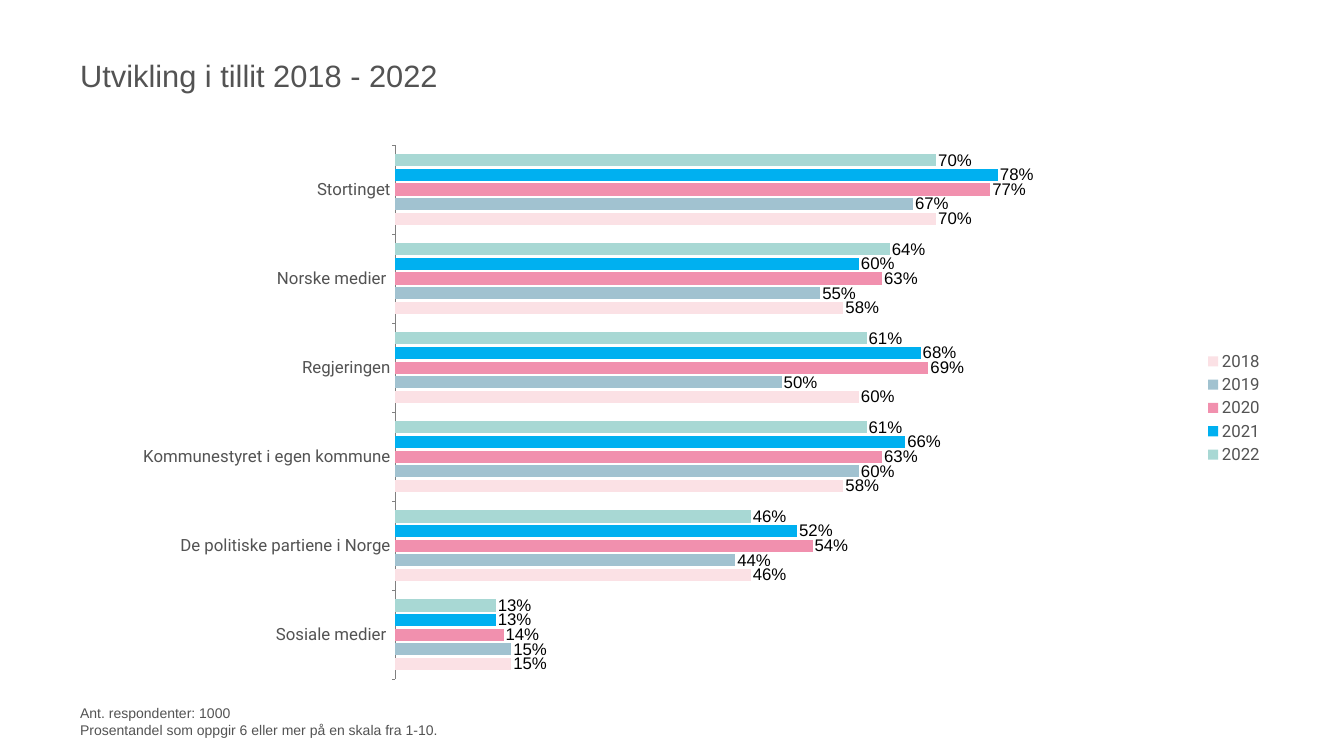
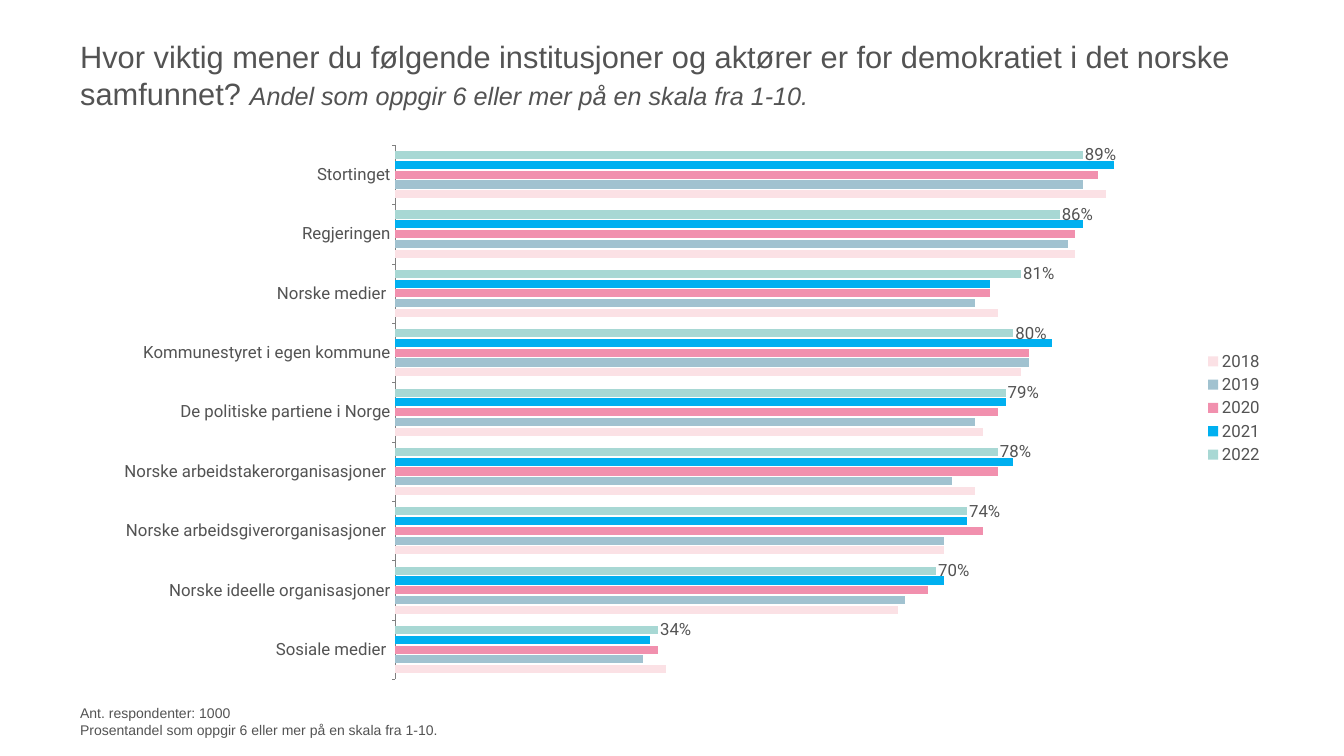
"""Builds two slides with clustered bar charts on trust and democracy in Norway."""
import dataclasses

import pptx
import pptx.chart.data
import pptx.dml.color
import pptx.enum.chart
import pptx.enum.text
import pptx.oxml
import pptx.oxml.ns
import pptx.util
from pptx.util import Inches


@dataclasses.dataclass(frozen=True)
class Theme:
    text: str = "535353"
    black: str = "000000"
    axis: str = "808080"
    font: str = "Arial"
    chart_font: str = "Roboto"
    title_size: int = 44
    subtitle_size: int = 36
    chart_size: int = 24
    note_size: int = 20


THEME = Theme()
YEAR_COLORS = {
    "2022": "A8D8D4",
    "2021": "00B0F0",
    "2020": "F190AE",
    "2019": "A1C2D0",
    "2018": "FBE1E5",
}
NOTE = ("Ant. respondenter: 1000", "Prosentandel som oppgir 6 eller mer på en skala fra 1-10.")
SLIDES = [
    {
        "title": "Utvikling i tillit 2018 - 2022",
        "subtitle": "",
        "labelled_years": list(YEAR_COLORS),
        "label_format": {"font_name": THEME.font, "color": THEME.black},
        "percentages": {
            "Stortinget": (70, 78, 77, 67, 70),
            "Norske medier ": (64, 60, 63, 55, 58),
            "Regjeringen": (61, 68, 69, 50, 60),
            "Kommunestyret i egen kommune": (61, 66, 63, 60, 58),
            "De politiske partiene i Norge": (46, 52, 54, 44, 46),
            "Sosiale medier ": (13, 13, 14, 15, 15),
        },
    },
    {
        "title": "Hvor viktig mener du følgende institusjoner og aktører er for demokratiet "
                 "i det norske samfunnet? ",
        "subtitle": "Andel som oppgir 6 eller mer på en skala fra 1-10.",
        "labelled_years": ["2022"],
        "label_format": {"font_name": THEME.chart_font, "color": THEME.text},
        "percentages": {
            "Stortinget": (89, 93, 91, 89, 92),
            "Regjeringen": (86, 89, 88, 87, 88),
            "Norske medier ": (81, 77, 77, 75, 78),
            "Kommunestyret i egen kommune": (80, 85, 82, 82, 81),
            "De politiske partiene i Norge": (79, 79, 78, 75, 76),
            "Norske arbeidstakerorganisasjoner ": (78, 80, 78, 72, 75),
            "Norske arbeidsgiverorganisasjoner ": (74, 74, 76, 71, 71),
            "Norske ideelle organisasjoner": (70, 71, 69, 66, 65),
            "Sosiale medier ": (34, 33, 34, 32, 35),
        },
    },
]

LEFT, WIDTH = 1.53, 23.66
TITLE_TOP, CHART_TOP, NOTE_TOP, NOTE_HEIGHT = 0.47, 2.51, 13.68, 0.9
INSET, NOTE_INSET = 0.06, 0.3
PLOT_AREA = {"x": 0.267, "y": 0.033, "w": 0.648, "h": 0.949}


def box(top, height):
    return [Inches(value) for value in (LEFT, top, WIDTH, height)]


def format_font(font, size, font_name=THEME.font, color=THEME.text, italic=False):
    font.size = pptx.util.Pt(size)
    font.name = font_name
    font.italic = italic
    font.color.rgb = pptx.dml.color.RGBColor.from_string(color)


def add_text(paragraph, text, **formatting):
    run = paragraph.add_run()
    run.text = text
    format_font(run.font, **formatting)


def prepare_frame(frame, anchor, top_inset=INSET):
    frame.word_wrap = True
    frame.auto_size = pptx.enum.text.MSO_AUTO_SIZE.NONE
    frame.vertical_anchor = anchor
    frame.margin_left = frame.margin_right = frame.margin_bottom = Inches(INSET)
    frame.margin_top = Inches(top_inset)
    paragraph = frame.paragraphs[0]
    paragraph.alignment = pptx.enum.text.PP_ALIGN.LEFT
    return paragraph


def add_title(slide, title, subtitle):
    shape = slide.shapes.title
    shape.left, shape.top, shape.width, shape.height = box(TITLE_TOP, CHART_TOP - TITLE_TOP)
    paragraph = prepare_frame(shape.text_frame, pptx.enum.text.MSO_ANCHOR.MIDDLE)
    add_text(paragraph, title, size=THEME.title_size)
    if subtitle:
        add_text(paragraph, subtitle, size=THEME.subtitle_size, italic=True)


def add_note(slide):
    shape = slide.shapes.add_textbox(*box(NOTE_TOP, NOTE_HEIGHT))
    paragraph = prepare_frame(shape.text_frame, pptx.enum.text.MSO_ANCHOR.TOP, NOTE_INSET)
    first_line, second_line = NOTE
    add_text(paragraph, first_line, size=THEME.note_size)
    paragraph.add_line_break()
    add_text(paragraph, second_line, size=THEME.note_size)


def place_plot_area(chart):
    plot_area = chart.plots[0]._element.getparent()
    for layout in plot_area.findall(pptx.oxml.ns.qn("c:layout")):
        plot_area.remove(layout)
    modes = "".join(f'<c:{key}Mode val="edge"/>' for key in "xy")
    sizes = "".join(f'<c:{key} val="{value}"/>' for key, value in PLOT_AREA.items())
    plot_area.insert(0, pptx.oxml.parse_xml(
        f'<c:layout {pptx.oxml.ns.nsdecls("c")}><c:manualLayout>'
        f'<c:layoutTarget val="inner"/>{modes}{sizes}</c:manualLayout></c:layout>'))


def format_axes(chart):
    values = chart.value_axis
    values.minimum_scale, values.maximum_scale = 0, 1
    values.has_major_gridlines = False
    values.visible = False
    categories = chart.category_axis
    categories.reverse_order = True
    categories.has_major_gridlines = False
    categories.major_tick_mark = pptx.enum.chart.XL_TICK_MARK.OUTSIDE
    categories.format.line.color.rgb = pptx.dml.color.RGBColor.from_string(THEME.axis)
    categories.format.line.width = pptx.util.Pt(0.75)
    format_font(categories.tick_labels.font, THEME.chart_size, THEME.chart_font)


def format_series(series, content):
    series.format.fill.solid()
    series.format.fill.fore_color.rgb = pptx.dml.color.RGBColor.from_string(
        YEAR_COLORS[series.name])
    series.invert_if_negative = False
    if series.name in content["labelled_years"]:
        labels = series.data_labels
        labels.show_value = True
        labels.number_format = "0%"
        labels.number_format_is_linked = False
        labels.position = pptx.enum.chart.XL_LABEL_POSITION.OUTSIDE_END
        format_font(labels.font, THEME.chart_size, **content["label_format"])


def add_bar_chart(slide, content):
    data = pptx.chart.data.CategoryChartData(number_format="0%")
    data.categories = list(content["percentages"])
    for year, percentages in zip(YEAR_COLORS, zip(*content["percentages"].values())):
        data.add_series(year, [percentage / 100 for percentage in percentages])
    chart = slide.shapes.add_chart(
        pptx.enum.chart.XL_CHART_TYPE.BAR_CLUSTERED,
        *box(CHART_TOP, NOTE_TOP - CHART_TOP), data).chart
    format_font(chart.font, 10, color=THEME.black)
    chart.has_title = False
    chart.has_legend = True
    chart.legend.position = pptx.enum.chart.XL_LEGEND_POSITION.RIGHT
    chart.legend.include_in_layout = False
    format_font(chart.legend.font, THEME.chart_size, THEME.chart_font)
    plot = chart.plots[0]
    plot.gap_width, plot.overlap = 150, -20
    plot.vary_by_categories = False
    for series in plot.series:
        format_series(series, content)
    format_axes(chart)
    place_plot_area(chart)


def main():
    presentation = pptx.Presentation()
    presentation.slide_width, presentation.slide_height = Inches(26.67), Inches(15)
    for content in SLIDES:
        slide = presentation.slides.add_slide(presentation.slide_layouts[5])
        add_title(slide, content["title"], content["subtitle"])
        add_bar_chart(slide, content)
        add_note(slide)
    presentation.save("out.pptx")


if __name__ == "__main__":
    main()
